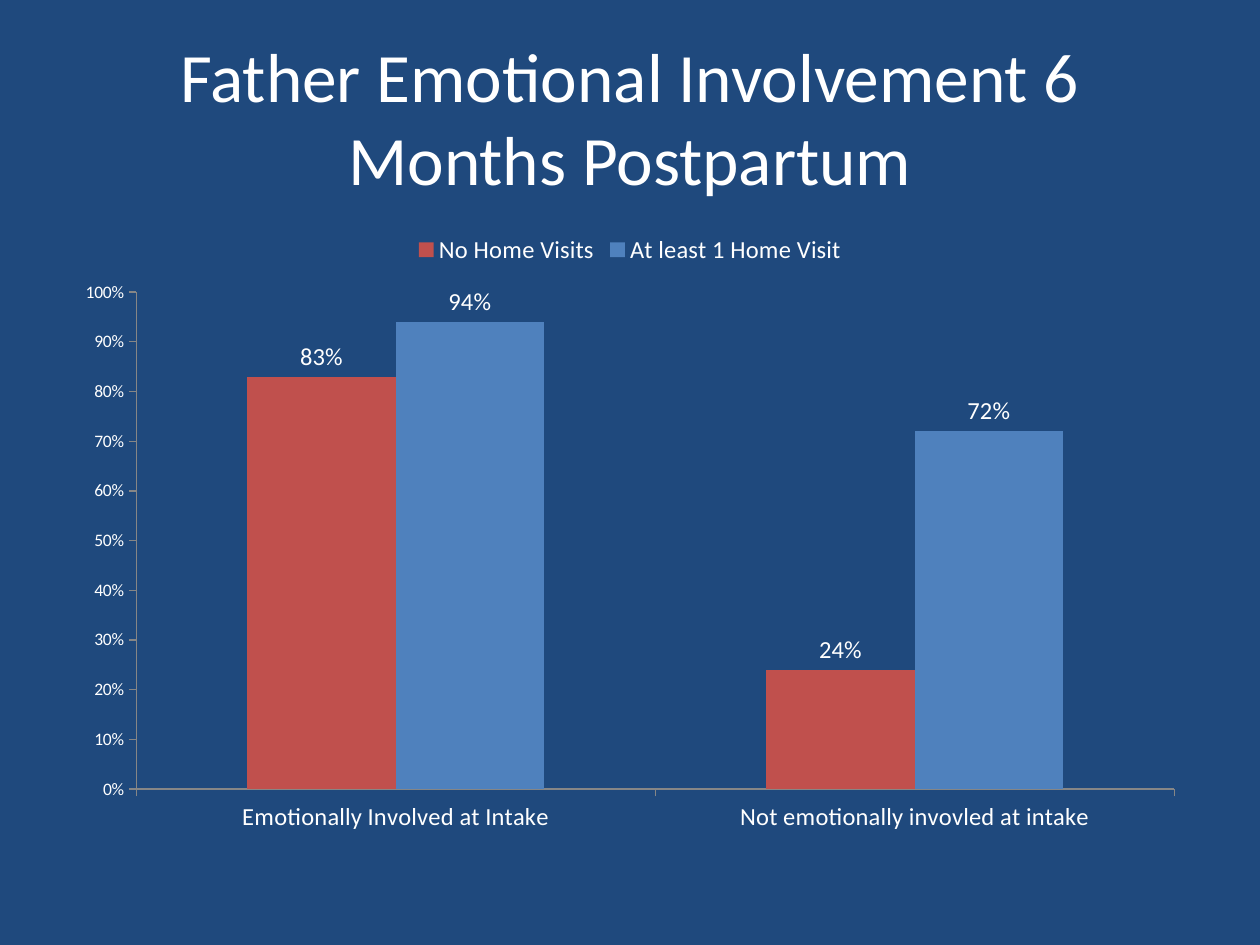
from dataclasses import dataclass

from pptx import Presentation
from pptx import util as u
from pptx.chart import data as chart_data
from pptx.dml.color import RGBColor
from pptx.enum import chart as ch, text

# Content
HEADLINE = "Father Emotional Involvement 6 Months Postpartum"
INTAKE_GROUPS = ["Emotionally Involved at Intake", "Not emotionally invovled at intake"]
VISIT_SERIES = [
    ("No Home Visits", (0.83, 0.24), "C0504D"),
    ("At least 1 Home Visit", (0.94, 0.72), "4F81BD"),
]


@dataclass(frozen=True)
class Theme:
    font: str = "Calibri"
    background: str = "1F497D"
    ink: str = "FFFFFF"
    axis: str = "868686"
    headline_size: float = 39.6
    label_size: float = 14
    scale_size: float = 10


THEME = Theme()
WIDTH, HEIGHT = u.Inches(10), u.Inches(7.5)

# Places as shares of the slide: left, top, width, height
HEADLINE_AREA = (0.05, 0.04, 0.9, 1 / 6)
CHART_AREA = (0.05, 0.7 / 3, 0.9, 0.66)


def place(area):
    return [round(share * side) for share, side in zip(area, (WIDTH, HEIGHT) * 2)]


def style(font, size):
    font.name = THEME.font
    font.size = u.Pt(size)
    font.color.rgb = RGBColor.from_string(THEME.ink)


def paint(fill, color):
    fill.solid()
    fill.fore_color.rgb = RGBColor.from_string(color)


def add_headline(slide):
    frame = slide.shapes.add_textbox(*place(HEADLINE_AREA)).text_frame
    frame.word_wrap = True
    frame.vertical_anchor = text.MSO_ANCHOR.MIDDLE
    paragraph = frame.paragraphs[0]
    paragraph.alignment = text.PP_ALIGN.CENTER
    headline = paragraph.add_run()
    headline.text = HEADLINE
    style(headline.font, THEME.headline_size)


def add_involvement_chart(slide):
    involvement = chart_data.CategoryChartData(number_format="0%")
    involvement.categories = INTAKE_GROUPS
    for name, shares, _ in VISIT_SERIES:
        involvement.add_series(name, shares)
    chart = slide.shapes.add_chart(
        ch.XL_CHART_TYPE.COLUMN_CLUSTERED, *place(CHART_AREA), involvement
    ).chart
    style(chart.font, THEME.scale_size)
    chart.has_title = False

    # Legend
    chart.has_legend = True
    chart.legend.position = ch.XL_LEGEND_POSITION.TOP
    chart.legend.include_in_layout = False
    style(chart.legend.font, THEME.label_size)

    # Axes
    for axis, size in (
        (chart.category_axis, THEME.label_size),
        (chart.value_axis, THEME.scale_size),
    ):
        axis.has_major_gridlines = False
        axis.major_tick_mark = ch.XL_TICK_MARK.OUTSIDE
        axis.minor_tick_mark = ch.XL_TICK_MARK.NONE
        axis.format.line.color.rgb = RGBColor.from_string(THEME.axis)
        style(axis.tick_labels.font, size)
    scale = chart.value_axis
    scale.minimum_scale, scale.maximum_scale, scale.major_unit = 0, 1, 0.1
    scale.tick_labels.number_format = "0%"
    scale.tick_labels.number_format_is_linked = False

    # Columns and their values
    columns = chart.plots[0]
    columns.gap_width, columns.overlap = 150, 0
    columns.vary_by_categories = False
    for series, (_, _, color) in zip(columns.series, VISIT_SERIES):
        paint(series.format.fill, color)
        series.invert_if_negative = False
        labels = series.data_labels
        labels.show_value = True
        labels.number_format = "0%"
        labels.number_format_is_linked = False
        labels.position = ch.XL_LABEL_POSITION.OUTSIDE_END
        style(labels.font, THEME.label_size)


def main():
    deck = Presentation()
    deck.slide_width, deck.slide_height = WIDTH, HEIGHT
    slide = deck.slides.add_slide(deck.slide_layouts[6])
    paint(slide.background.fill, THEME.background)
    add_headline(slide)
    add_involvement_chart(slide)
    deck.save("out.pptx")


if __name__ == "__main__":
    main()
